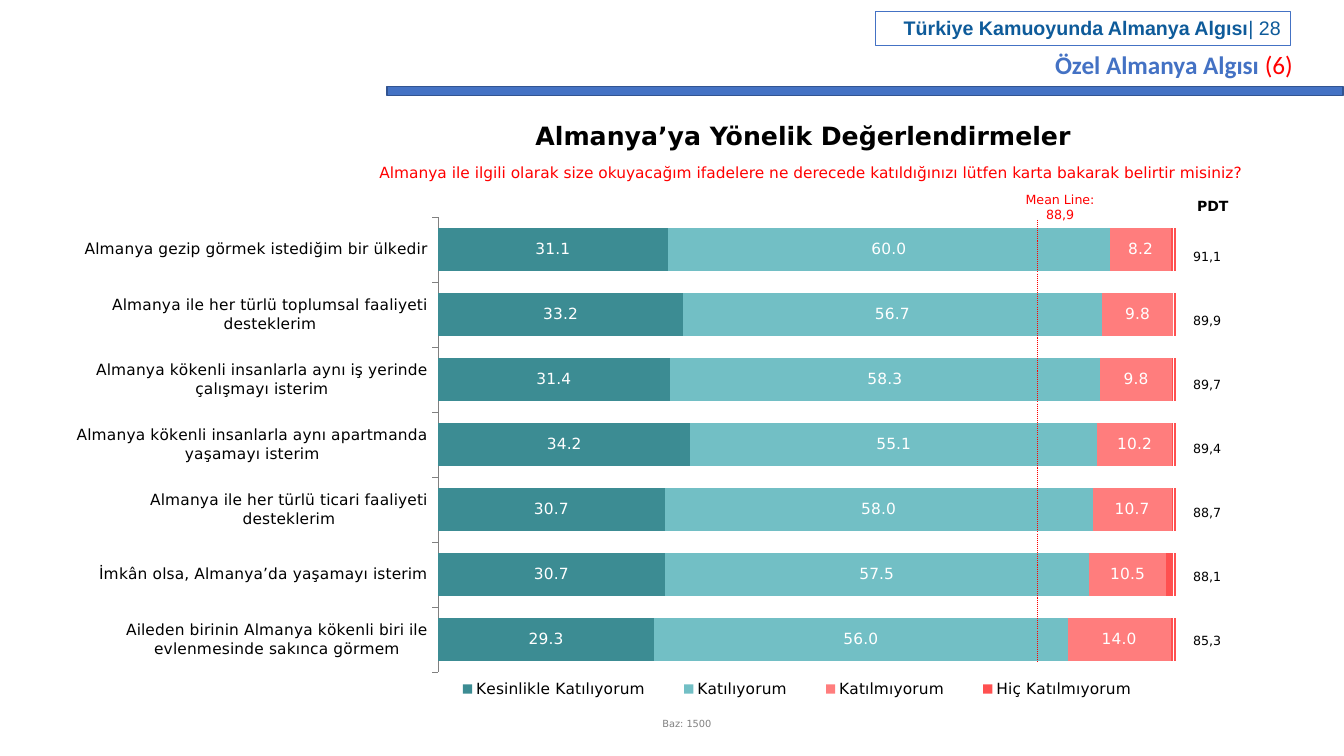
from dataclasses import dataclass

from lxml import etree
from pptx import Presentation
from pptx import util as u
from pptx.chart.data import CategoryChartData
from pptx.dml.color import RGBColor
from pptx.enum import chart as charts, dml, shapes, text
from pptx.oxml import ns

BLACK = RGBColor(0x00, 0x00, 0x00)
WHITE = RGBColor(0xFF, 0xFF, 0xFF)
GRAY = RGBColor(0x80, 0x80, 0x80)
RED = RGBColor(0xFF, 0x00, 0x00)
BLUE = RGBColor(0x44, 0x72, 0xC4)
BAR_EDGE = RGBColor(0x32, 0x54, 0x91)
HEADER_BLUE = RGBColor(0x0E, 0x5B, 0x9A)
DARK_TEAL = RGBColor(0x3C, 0x8C, 0x93)
TEAL = RGBColor(0x72, 0xBF, 0xC5)
PINK = RGBColor(0xFF, 0x7D, 0x7D)
CORAL = RGBColor(0xFF, 0x50, 0x50)
BODY_FONT = "DejaVu Sans"


@dataclass(frozen=True)
class Box:
    """A rectangle in centimetres."""
    left: float
    top: float
    width: float
    height: float

    def lengths(self) -> tuple:
        return tuple(u.Cm(n) for n in (self.left, self.top, self.width, self.height))


@dataclass(frozen=True)
class Piece:
    words: str
    size: float
    color: RGBColor
    bold: bool = False
    font: str = BODY_FONT


@dataclass(frozen=True)
class Label:
    box: Box
    pieces: tuple[Piece, ...]
    align: text.PP_ALIGN = text.PP_ALIGN.CENTER


@dataclass(frozen=True)
class Answer:
    name: str
    values: tuple[float, ...]
    color: RGBColor
    labelled: bool = True


@dataclass(frozen=True)
class Statement:
    wording: str
    score: str


TITLE = Label(Box(8.15, 2.9, 24.18, 1.02),
              (Piece("Almanya’ya Yönelik Değerlendirmeler", 18, BLACK, True),))
HEADER = Label(Box(22.07, 0.28, 10.46, 0.86),
               (Piece("Türkiye Kamuoyunda Almanya Algısı", 14, HEADER_BLUE, True, "Arial"),
                Piece("| 28", 14, HEADER_BLUE, False, "Arial")), text.PP_ALIGN.RIGHT)
LABELS = (
    Label(Box(8.36, 3.99, 24.18, 0.74),
          (Piece("Almanya ile ilgili olarak size okuyacağım ifadelere ne derecede "
                 "katıldığınızı lütfen karta bakarak belirtir misiniz?", 11, RED),)),
    Label(Box(29.79, 4.85, 1.55, 0.69), (Piece("PDT", 10, BLACK, True),)),
    Label(Box(25.32, 4.7, 2.79, 1.02), (Piece("Mean Line: 88,9", 9, RED),)),
    Label(Box(26.34, 1.12, 6.63, 1.02),
          (Piece("Özel Almanya Algısı ", 18, BLUE, True, "Calibri"),
           Piece("(6)", 18, RED, False, "Calibri")), text.PP_ALIGN.LEFT),
    Label(Box(16.28, 17.96, 2.06, 0.56), (Piece("Baz: 1500", 7, GRAY),)),
)
STATEMENTS = (
    Statement("Almanya gezip görmek istediğim bir ülkedir", "91,1"),
    Statement("Almanya ile her türlü toplumsal faaliyeti desteklerim", "89,9"),
    Statement("Almanya kökenli insanlarla aynı iş yerinde çalışmayı isterim", "89,7"),
    Statement("Almanya kökenli insanlarla aynı apartmanda yaşamayı isterim", "89,4"),
    Statement("Almanya ile her türlü ticari faaliyeti desteklerim", "88,7"),
    Statement("İmkân olsa, Almanya’da yaşamayı isterim", "88,1"),
    Statement("Aileden birinin Almanya kökenli biri ile evlenmesinde sakınca görmem", "85,3"),
)
ANSWERS = (
    Answer("Kesinlikle Katılıyorum", (31.1, 33.2, 31.4, 34.2, 30.7, 30.7, 29.3), DARK_TEAL),
    Answer("Katılıyorum", (60, 56.7, 58.3, 55.1, 58, 57.5, 56), TEAL),
    Answer("Katılmıyorum", (8.2, 9.8, 9.8, 10.2, 10.7, 10.5, 14), PINK),
    Answer("Hiç Katılmıyorum", (0.7, 0.3, 0.5, 0.5, 0.6, 1.3, 0.7), CORAL, False),
)


def write(shape, label: Label) -> None:
    frame = shape.text_frame
    frame.word_wrap = True
    paragraph = frame.paragraphs[0]
    paragraph.text = label.pieces[0].words
    paragraph.alignment = label.align
    for piece in label.pieces[1:]:
        paragraph.add_run().text = piece.words
    for run, piece in zip(paragraph.runs, label.pieces):
        run.font.name = piece.font
        run.font.size = u.Pt(piece.size)
        run.font.bold = piece.bold
        run.font.color.rgb = piece.color


def add_rectangle(slide, box: Box, edge: RGBColor, width: float, fill: RGBColor | None = None):
    shape = slide.shapes.add_shape(shapes.MSO_SHAPE.RECTANGLE, *box.lengths())
    shape.shadow.inherit = False
    if fill is None:
        shape.fill.background()
    else:
        shape.fill.solid()
        shape.fill.fore_color.rgb = fill
    shape.line.color.rgb = edge
    shape.line.width = u.Pt(width)
    return shape


def manual_layout(inner: bool, x: float, y: float, w: float, h: float):
    """Build a c:layout element from fractions of the chart area."""
    layout = etree.Element(ns.qn("c:layout"))
    manual = etree.SubElement(layout, ns.qn("c:manualLayout"))
    settings = [("layoutTarget", "inner")] if inner else []
    settings += [("xMode", "edge"), ("yMode", "edge"), ("x", x), ("y", y), ("w", w), ("h", h)]
    for name, value in settings:
        etree.SubElement(manual, ns.qn(f"c:{name}")).set("val", str(value))
    return layout


def add_answer_chart(slide, box: Box) -> None:
    data = CategoryChartData(number_format="###0.0")
    data.categories = [statement.wording for statement in STATEMENTS]
    for answer in ANSWERS:
        data.add_series(answer.name, answer.values)
    chart = slide.shapes.add_chart(charts.XL_CHART_TYPE.BAR_STACKED, *box.lengths(), data).chart
    chart.has_title = False
    chart.font.name = BODY_FONT
    chart.font.size = u.Pt(11)
    chart.font.color.rgb = GRAY

    plot = chart.plots[0]
    plot.gap_width = 50
    plot.overlap = 100
    plot.vary_by_categories = False
    for series, answer in zip(plot.series, ANSWERS):
        series.format.fill.solid()
        series.format.fill.fore_color.rgb = answer.color
        if answer.labelled:
            labels = series.data_labels
            labels.show_value = True
            labels.position = charts.XL_LABEL_POSITION.CENTER
            labels.number_format = "###0.0"
            labels.number_format_is_linked = False
            labels.font.size = u.Pt(11)
            labels.font.color.rgb = WHITE

    axis = chart.category_axis
    axis.reverse_order = True
    axis.major_tick_mark = charts.XL_TICK_MARK.OUTSIDE
    axis.format.line.color.rgb = GRAY
    axis.format.line.width = u.Pt(0.23)
    axis.tick_labels.font.size = u.Pt(11)
    axis.tick_labels.font.color.rgb = BLACK
    chart.value_axis.minimum_scale = 0
    chart.value_axis.maximum_scale = 100
    chart.value_axis.has_major_gridlines = False
    chart.value_axis.visible = False

    chart.has_legend = True
    chart.legend.position = charts.XL_LEGEND_POSITION.RIGHT
    chart.legend.include_in_layout = False
    chart.legend.font.size = u.Pt(11)
    chart.legend.font.color.rgb = BLACK
    for old in chart.element.xpath("c:chart/c:plotArea/c:layout | c:chart/c:legend/c:layout"):
        old.getparent().remove(old)
    plot_area = chart.element.xpath("c:chart/c:plotArea")[0]
    plot_area.insert(0, manual_layout(True, 0.328, 0, 0.672, 0.935))
    legend_position = chart.element.xpath("c:chart/c:legend/c:legendPos")[0]
    legend_position.addnext(manual_layout(False, 0.32, 0.94, 0.67, 0.06))


def add_score_table(slide, box: Box) -> None:
    frame = slide.shapes.add_table(len(STATEMENTS), 1, *box.lengths())
    table = frame.table
    table.first_row = table.horz_banding = False
    for row, statement in enumerate(STATEMENTS):
        cell = table.cell(row, 0)
        cell.fill.background()
        cell.vertical_anchor = text.MSO_ANCHOR.MIDDLE
        cell.margin_left = cell.margin_right = cell.margin_top = u.Cm(0.03)
        cell.margin_bottom = 0
        write(cell, Label(box, (Piece(statement.score, 9, BLACK),)))
        properties = cell._tc.get_or_add_tcPr()
        for index, side in enumerate("LRTB"):
            border = etree.Element(ns.qn(f"a:ln{side}"), w=str(u.Pt(1)))
            fill = etree.SubElement(border, ns.qn("a:solidFill"))
            etree.SubElement(fill, ns.qn("a:srgbClr")).set("val", str(WHITE))
            properties.insert(index, border)


def add_mean_line(slide, x: float, top: float, bottom: float) -> None:
    line = slide.shapes.add_connector(shapes.MSO_CONNECTOR.STRAIGHT,
                                      u.Cm(x), u.Cm(top), u.Cm(x), u.Cm(bottom))
    line.line.color.rgb = RED
    line.line.width = u.Pt(0.75)
    line.line.dash_style = dml.MSO_LINE.ROUND_DOT
    etree.SubElement(line.element.spPr, ns.qn("a:effectLst"))


def main() -> None:
    presentation = Presentation()
    presentation.slide_width = u.Cm(33.87)
    presentation.slide_height = u.Cm(19.05)
    slide = presentation.slides.add_slide(presentation.slide_layouts[5])
    title = slide.shapes.title
    title.left, title.top, title.width, title.height = TITLE.box.lengths()
    write(title, TITLE)

    add_rectangle(slide, Box(9.75, 2.18, 24.1, 0.23), BAR_EDGE, 1, BLUE)
    write(add_rectangle(slide, HEADER.box, BLUE, 0.75), HEADER)
    add_answer_chart(slide, Box(1.93, 5.46, 27.71, 12.27))
    add_score_table(slide, Box(29.57, 5.66, 1.7, 11.28))
    add_mean_line(slide, 26.14, 5.54, 16.71)
    for label in LABELS:
        write(slide.shapes.add_textbox(*label.box.lengths()), label)
    presentation.save("out.pptx")


if __name__ == "__main__":
    main()
